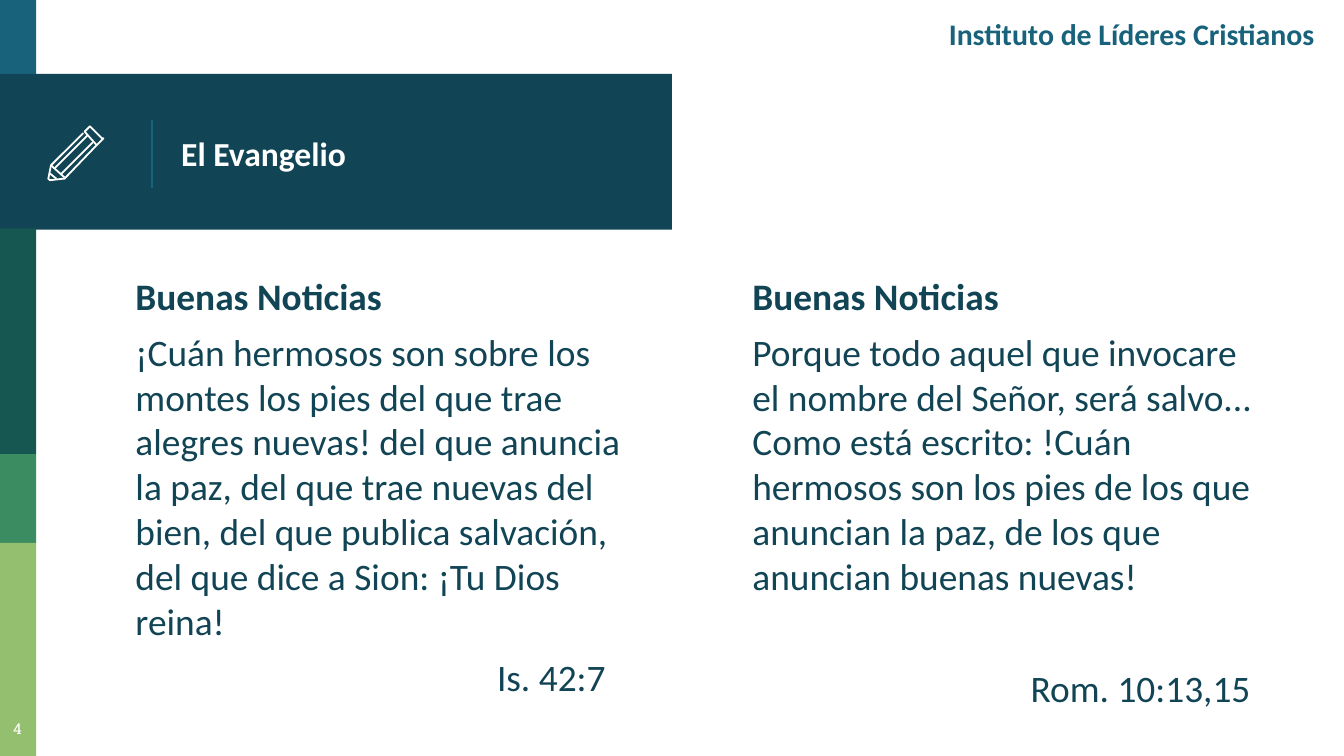
from lxml import etree
from pptx import Presentation
from pptx.dml.color import RGBColor
from pptx.enum.shapes import MSO_CONNECTOR, MSO_SHAPE
from pptx.enum.text import MSO_ANCHOR, PP_ALIGN
from pptx.oxml.ns import qn
from pptx.util import Inches, Pt

TOP, MIDDLE = MSO_ANCHOR.TOP, MSO_ANCHOR.MIDDLE
LEFT, CENTER, RIGHT = PP_ALIGN.LEFT, PP_ALIGN.CENTER, PP_ALIGN.RIGHT
BLUE = RGBColor(0x18, 0x63, 0x7B)
NAVY = RGBColor(0x11, 0x44, 0x54)
TEAL = RGBColor(0x16, 0x57, 0x51)
GREEN = RGBColor(0x3B, 0x8D, 0x61)
LIME = RGBColor(0x94, 0xBF, 0x6E)
WHITE = RGBColor(0xFF, 0xFF, 0xFF)

# Content
INSTITUTE = "Instituto de Líderes Cristianos"
TITLE = "El Evangelio"
PAGE_NUMBER = "4"
HEADING = "Buenas Noticias"
COLUMNS = [
    {
        "left": 0.91,
        "verse": "¡Cuán hermosos son sobre los montes los pies del que trae "
                 "alegres nuevas! del que anuncia la paz, del que trae nuevas "
                 "del bien, del que publica salvación, del que dice a Sion: "
                 "¡Tu Dios reina!",
        "reference": "Is. 42:7", "indent": 2.69, "gap": 6,
    },
    {
        "left": 5.5,
        "verse": "Porque todo aquel que invocare el nombre del Señor, será "
                 "salvo...\nComo está escrito: !Cuán hermosos son los pies de "
                 "los que anuncian la paz, de los que anuncian buenas nuevas!",
        "reference": "Rom. 10:13,15", "indent": 2.07, "gap": 36,
    },
]

# Bands: left, top, width, height, colour
BANDS = [
    (0, 0, 0.27, 0.58, BLUE),
    (0, 0.55, 5, 1.16, NAVY),
    (0, 1.7, 0.27, 1.68, TEAL),
    (0, 3.38, 0.27, 0.66, GREEN),
    (0, 4.04, 0.27, 1.59, LIME),
]

# Pencil strokes in hundredths of an inch: points, closed
PENCIL = [
    ([(76, 103), (68, 95), (67, 94), (66, 95), (63, 98), (72, 108),
      (76, 104), (77, 103)], True),
    ([(69, 106), (45, 130)], False),
    ([(62, 99), (38, 123), (36, 133), (37, 134), (38, 134), (47, 133),
      (48, 133), (72, 108)], False),
    ([(41, 125), (65, 101)], False),
    ([(42, 133), (37, 129)], False),
    ([(38, 123), (48, 132)], False),
]


def add_text(frame, text, size=20, font="Calibri", color=NAVY, bold=False,
             align=LEFT, before=0, indent=0, first=False):
    paragraph = frame.paragraphs[0] if first else frame.add_paragraph()
    paragraph.text = text
    paragraph.alignment = align
    paragraph.space_before = Pt(before)
    if indent:
        paragraph._p.get_or_add_pPr().set("marL", str(Inches(indent)))
    for run in paragraph.runs:
        run.font.size = Pt(size)
        run.font.name = font
        run.font.bold = bold
        run.font.color.rgb = color


def add_frame(slide, left, top, width, height, anchor=TOP, margin_top=0.1):
    box = slide.shapes.add_textbox(Inches(left), Inches(top),
                                   Inches(width), Inches(height))
    frame = box.text_frame
    frame.word_wrap = True
    frame.vertical_anchor = anchor
    frame.margin_left = frame.margin_right = frame.margin_bottom = Inches(0.1)
    frame.margin_top = Inches(margin_top)
    return frame


def add_band(slide, left, top, width, height, color):
    band = slide.shapes.add_shape(MSO_SHAPE.RECTANGLE, Inches(left),
                                  Inches(top), Inches(width), Inches(height))
    band.shadow.inherit = False
    band.fill.solid()
    band.fill.fore_color.rgb = color
    band.line.fill.background()


def add_divider(slide, x, top, bottom):
    divider = slide.shapes.add_connector(
        MSO_CONNECTOR.STRAIGHT, Inches(x), Inches(top), Inches(x), Inches(bottom))
    divider.line.color.rgb = BLUE
    divider.line.width = Pt(0.75)
    etree.SubElement(divider._element.spPr, qn("a:effectLst"))


def add_stroke(slide, points, closed):
    builder = slide.shapes.build_freeform(*points[0], scale=Inches(0.01))
    builder.add_line_segments(points[1:], close=closed)
    stroke = builder.convert_to_shape()
    stroke.shadow.inherit = False
    stroke.fill.background()
    stroke.line.color.rgb = WHITE
    stroke.line.width = Pt(0.96)


def main():
    # Widescreen page, 16 to 9
    presentation = Presentation()
    presentation.slide_width = Inches(10)
    presentation.slide_height = Inches(10) * 9 // 16
    slide = presentation.slides.add_slide(presentation.slide_layouts[6])

    # Side bar, title band and divider
    for band in BANDS:
        add_band(slide, *band)
    add_divider(slide, 1.13, 0.89, 1.4)

    # Title and pencil icon
    title = add_frame(slide, 1.25, 0.58, 3.51, 1.12, anchor=MIDDLE)
    add_text(title, TITLE, size=18, color=WHITE, bold=True, first=True)
    for points, closed in PENCIL:
        add_stroke(slide, points, closed)

    # Verse columns
    for column in COLUMNS:
        frame = add_frame(slide, column["left"], 1.93, 4, 3.45)
        add_text(frame, HEADING, bold=True, before=6, first=True)
        add_text(frame, column["verse"], before=6)
        add_text(frame, column["reference"], before=column["gap"],
                 indent=column["indent"])

    # Page number and institute name
    number = add_frame(slide, -0.06, 5.27, 0.38, 0.35, margin_top=0.13)
    add_text(number, PAGE_NUMBER, size=8, font="Roboto Slab", color=WHITE,
             align=CENTER, first=True)
    header = add_frame(slide, 6.18, 0.08, 3.7, 0.61, margin_top=0.04)
    add_text(header, INSTITUTE, size=16, color=BLUE, bold=True, align=RIGHT,
             first=True)

    presentation.save("out.pptx")


if __name__ == "__main__":
    main()
